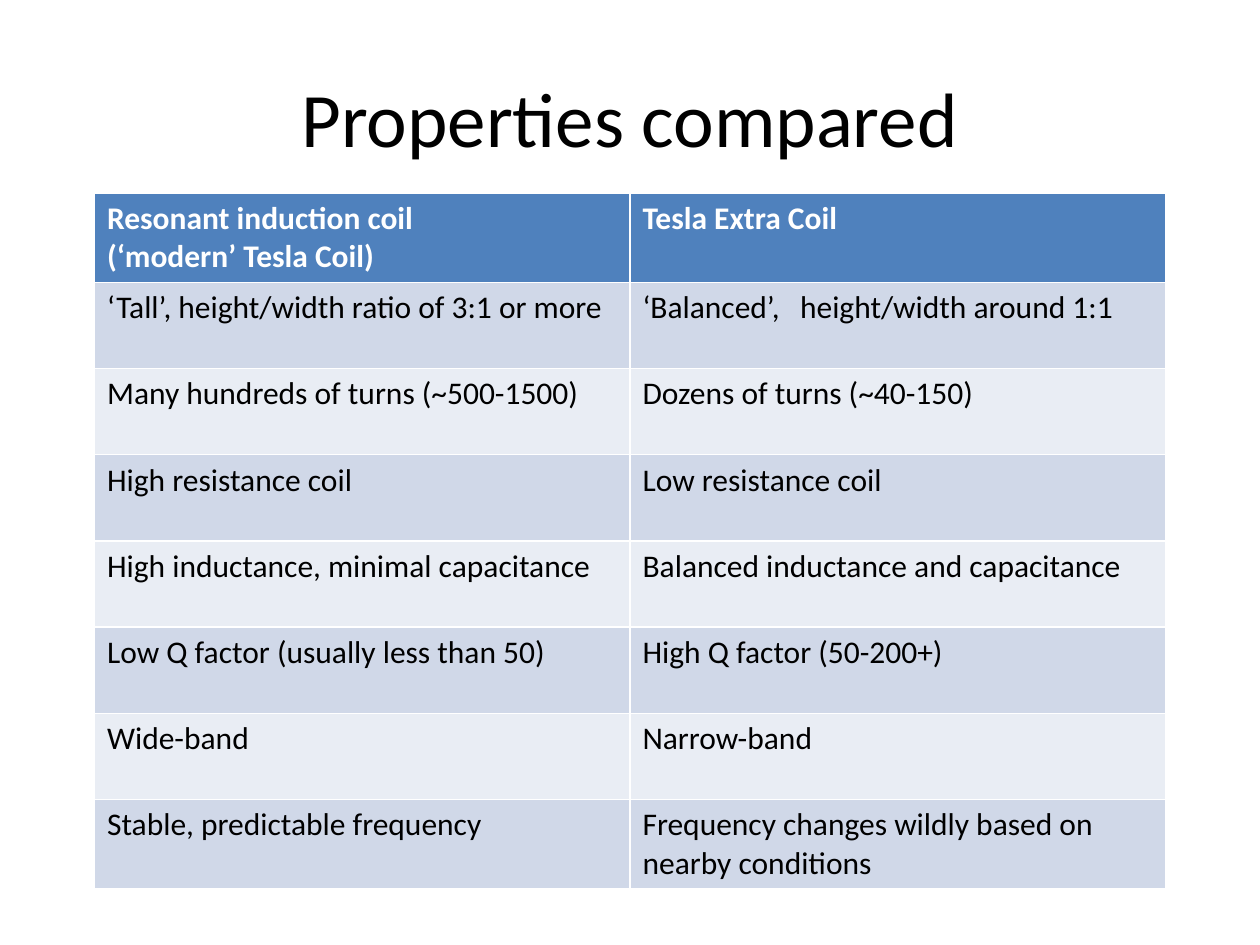
from lxml.etree import SubElement
from pptx import Presentation
from pptx.dml.color import RGBColor
from pptx.enum.text import MSO_ANCHOR, PP_ALIGN
from pptx.oxml.ns import qn
from pptx.util import Inches, Pt

BLACK = RGBColor(0x00, 0x00, 0x00)
WHITE = RGBColor(0xFF, 0xFF, 0xFF)
HEADER_BLUE = RGBColor(0x4F, 0x81, 0xBD)
BANDS = (RGBColor(0xE9, 0xED, 0xF4), RGBColor(0xD0, 0xD8, 0xE8))

SLIDE_WIDTH, SLIDE_HEIGHT = Inches(10), Inches(7.5)
TITLE_BOX = (0.05, 0.04, 0.9, 1 / 6)
TABLE_BOX = (0.075, 0.204, 0.85, 0.73)
TAB_STOP = Inches(1.25)

TITLE_FORMAT = {"name": "Calibri", "size": Pt(44), "bold": False}
HEADER_FORMAT = {"name": "Calibri", "size": Pt(18), "bold": True}
BODY_FORMAT = {"name": "Calibri", "size": Pt(18), "bold": False}

COMPARISON = [
    ("Resonant induction coil\n(‘modern’ Tesla Coil)", "Tesla Extra Coil"),
    ("‘Tall’, height/width ratio of 3:1 or more", "‘Balanced’,\theight/width around 1:1"),
    ("Many hundreds of turns (~500-1500)", "Dozens of turns (~40-150)"),
    ("High resistance coil", "Low resistance coil"),
    ("High inductance, minimal capacitance", "Balanced inductance and capacitance"),
    ("Low Q factor (usually less than 50)", "High Q factor (50-200+)"),
    ("Wide-band", "Narrow-band"),
    ("Stable, predictable frequency", "Frequency changes wildly based on nearby conditions"),
]


def to_lengths(box):
    """Turn shares of the slide into left, top, width and height."""
    sides = (SLIDE_WIDTH, SLIDE_HEIGHT) * 2
    return [round(share * side) for share, side in zip(box, sides)]


def add_tab_stop(paragraph):
    """Give a paragraph one left-aligned tab stop."""
    tab_list = SubElement(paragraph._p.get_or_add_pPr(), qn("a:tabLst"))
    SubElement(tab_list, qn("a:tab"), pos=str(TAB_STOP), algn="l")


def write_text(text_frame, text, alignment, font_format, color):
    """Fill a text frame and format each of its runs."""
    text_frame.text = text
    for paragraph in text_frame.paragraphs:
        paragraph.alignment = alignment
        if "\t" in paragraph.text:
            add_tab_stop(paragraph)
        for run in paragraph.runs:
            for name, value in font_format.items():
                setattr(run.font, name, value)
            run.font.color.rgb = color


def place_title(slide, box, text):
    """Place the centred title in its box."""
    title = slide.shapes.title
    title.left, title.top, title.width, title.height = to_lengths(box)
    title.text_frame.vertical_anchor = MSO_ANCHOR.MIDDLE
    write_text(title.text_frame, text, PP_ALIGN.CENTER, TITLE_FORMAT, BLACK)


def place_comparison(slide, box, rows):
    """Place the banded comparison table in its box."""
    table = slide.shapes.add_table(len(rows), len(rows[0]), *to_lengths(box)).table
    for row_index, row in enumerate(rows):
        is_header = row_index == 0
        fill_color = HEADER_BLUE if is_header else BANDS[row_index % 2]
        font_format = HEADER_FORMAT if is_header else BODY_FORMAT
        text_color = WHITE if is_header else BLACK
        for column_index, text in enumerate(row):
            cell = table.cell(row_index, column_index)
            cell.fill.solid()
            cell.fill.fore_color.rgb = fill_color
            write_text(cell.text_frame, text, PP_ALIGN.LEFT, font_format, text_color)


def main():
    """Build and save the slide."""
    presentation = Presentation()
    presentation.slide_width, presentation.slide_height = SLIDE_WIDTH, SLIDE_HEIGHT
    slide = presentation.slides.add_slide(presentation.slide_layouts.get_by_name("Title Only"))
    place_title(slide, TITLE_BOX, "Properties compared")
    place_comparison(slide, TABLE_BOX, COMPARISON)
    presentation.save("out.pptx")


if __name__ == "__main__":
    main()
